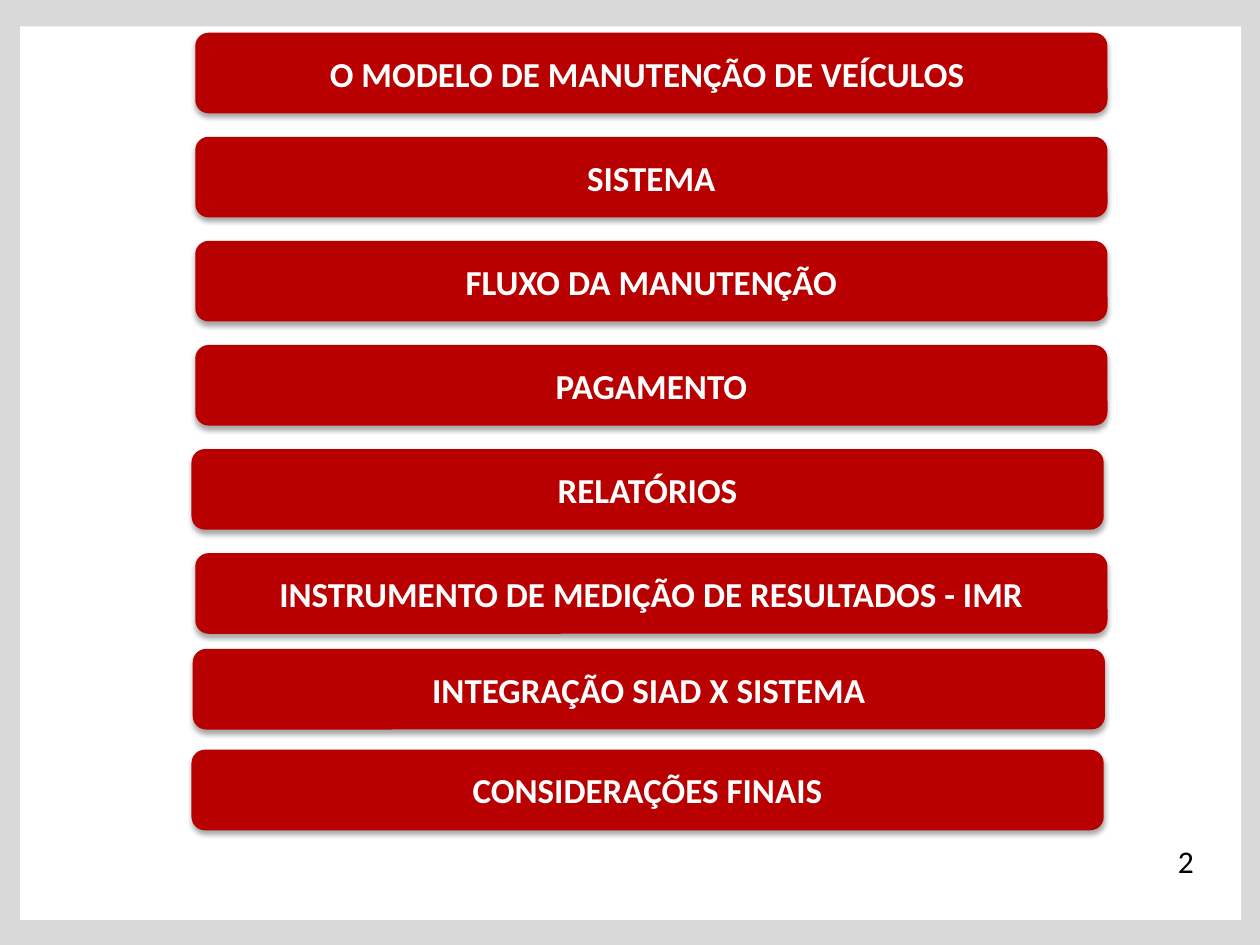
from lxml import etree
from pptx import Presentation
from pptx import util as u
from pptx.dml.color import RGBColor
from pptx.enum import shapes, text
from pptx.oxml.ns import qn

GREY = RGBColor(0xD9, 0xD9, 0xD9)
WHITE = RGBColor(0xFF, 0xFF, 0xFF)
BLACK = RGBColor(0, 0, 0)
RED = RGBColor(0xB8, 0, 0)
FONT = "Calibri"

FIRST_TOP, SIXTH_TOP = 0.26, 4.39
PITCH = (SIXTH_TOP - FIRST_TOP) / 5
BAR_WIDTH, BAR_HEIGHT = 7.24, 0.64
REGULAR_TOPICS = [
    ("O MODELO DE MANUTENÇÃO DE VEÍCULOS ", 1.55),
    ("SISTEMA", 1.55),
    ("FLUXO DA MANUTENÇÃO", 1.55),
    ("PAGAMENTO", 1.55),
    ("RELATÓRIOS", 1.52),
    ("INSTRUMENTO DE MEDIÇÃO DE RESULTADOS - IMR", 1.55),
]
CLOSING_TOPICS = [
    ("CONSIDERAÇÕES FINAIS", 1.52, 5.95),
    ("INTEGRAÇÃO SIAD X SISTEMA", 1.53, 5.15),
]


def add_block(page, kind, left, top, width, height, color):
    block = page.shapes.add_shape(
        kind, u.Inches(left), u.Inches(top), u.Inches(width), u.Inches(height)
    )
    block.shadow.inherit = False
    block.fill.solid()
    block.fill.fore_color.rgb = color
    block.line.fill.background()
    return block


def write_line(box, wording, size, color, bold=False):
    para = box.text_frame.paragraphs[0]
    para.text = wording
    para.font.name = FONT
    para.font.size = u.Pt(size)
    para.font.bold = bold
    para.font.color.rgb = color
    return para


def cast_shadow(block):
    effects = block.element.spPr.find(qn("a:effectLst"))
    shadow = etree.SubElement(
        effects, qn("a:outerShdw"), blurRad=str(u.Pt(3.1)), dist=str(u.Pt(1.8)),
        dir="5400000", rotWithShape="0",
    )
    color = etree.SubElement(shadow, qn("a:srgbClr"), val=str(BLACK))
    etree.SubElement(color, qn("a:alpha"), val="35000")


def add_frame(page):
    rectangle = shapes.MSO_SHAPE.RECTANGLE
    add_block(page, rectangle, 0, 0, 10, 7.5, GREY)
    add_block(page, rectangle, 0.16, 0.21, 9.69, 7.09, WHITE)


def add_page_number(page, left, top, width, height):
    box = page.shapes.add_textbox(
        u.Inches(left), u.Inches(top), u.Inches(width), u.Inches(height)
    )
    box.text_frame.word_wrap = True
    write_line(box, "2", 18, BLACK)


def add_topic(page, wording, left, top, width, height):
    bar = add_block(
        page, shapes.MSO_SHAPE.ROUNDED_RECTANGLE, left, top, width, height, RED
    )
    cast_shadow(bar)
    bar.text_frame.word_wrap = False
    bar.text_frame.vertical_anchor = text.MSO_ANCHOR.MIDDLE
    para = write_line(bar, wording, 20, WHITE, bold=True)
    para.alignment = text.PP_ALIGN.CENTER


def main():
    deck = Presentation()
    deck.slide_width, deck.slide_height = u.Inches(10), u.Inches(7.5)
    page = deck.slides.add_slide(deck.slide_layouts[6])
    add_frame(page)
    add_page_number(page, 9.25, 6.63, 0.75, 0.4)
    topics = [
        (wording, left, FIRST_TOP + index * PITCH)
        for index, (wording, left) in enumerate(REGULAR_TOPICS)
    ]
    for wording, left, top in topics + CLOSING_TOPICS:
        add_topic(page, wording, left, top, BAR_WIDTH, BAR_HEIGHT)
    deck.save("out.pptx")


if __name__ == "__main__":
    main()
